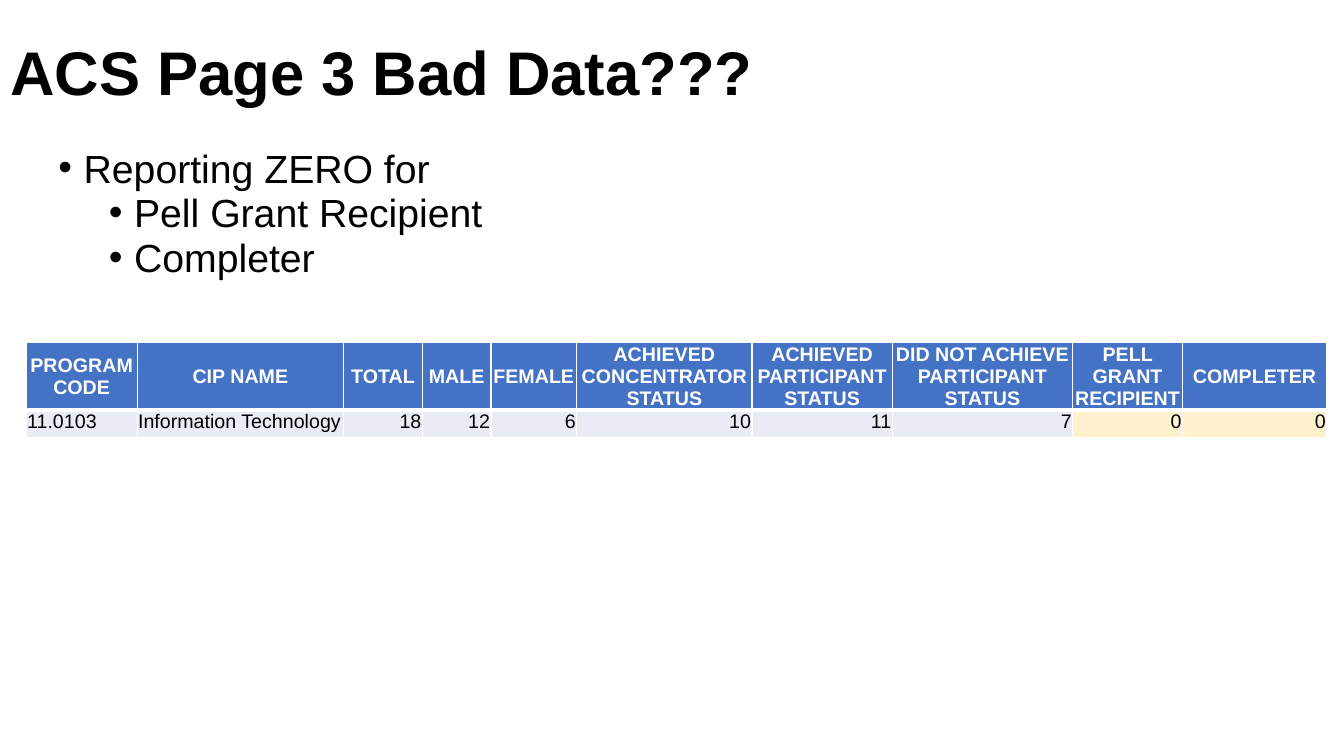
from lxml import etree
from pptx import Presentation
from pptx.dml.color import RGBColor
from pptx.enum.text import MSO_ANCHOR, MSO_AUTO_SIZE, PP_ALIGN
from pptx.oxml.ns import qn
from pptx.util import Inches, Pt

LEFT, MID, RIGHT = PP_ALIGN.LEFT, PP_ALIGN.CENTER, PP_ALIGN.RIGHT
TOP, CENTER = MSO_ANCHOR.TOP, MSO_ANCHOR.MIDDLE
FIXED = MSO_AUTO_SIZE.NONE

BLACK, WHITE = "000000", "FFFFFF"
BLUE, PALE, CREAM = "4472C4", "E9EBF5", "FFF2CC"

# Name, width and value of each table column
COLS = [
    ("PROGRAM CODE", 1.1, "11.0103"),
    ("CIP NAME", 2.05, "Information Technology"),
    ("TOTAL", 0.78, "18"),
    ("MALE", 0.68, "12"),
    ("FEMALE", 0.85, "6"),
    ("ACHIEVED CONCENTRATOR STATUS", 1.74, "10"),
    ("ACHIEVED PARTICIPANT STATUS", 1.39, "11"),
    ("DID NOT ACHIEVE PARTICIPANT STATUS", 1.79, "7"),
    ("PELL GRANT RECIPIENT", 1.09, "0"),
    ("COMPLETER", 1.43, "0"),
]
ROWS = [0.65, 0.28]
POINTS = [(0, "Reporting ZERO for"), (1, "Pell Grant Recipient"), (1, "Completer")]


def color(code):
    return RGBColor.from_string(code)


def apply(item, **values):
    for name, value in values.items():
        setattr(item, name, value)


def place(shape, box):
    sides = ("left", "top", "width", "height")
    apply(shape, **dict(zip(sides, map(Inches, box))))


def write(para, text, size, tone=BLACK, bold=False):
    run = para.add_run()
    run.text = text
    apply(run.font, name="Arial", size=Pt(size), bold=bold)
    run.font.color.rgb = color(tone)


def bullet(para, left):
    props = para._p.get_or_add_pPr()
    props.set("marL", str(Inches(left)))
    props.set("indent", str(Inches(-0.25)))
    etree.SubElement(props, qn("a:buFont"), typeface="Arial")
    etree.SubElement(props, qn("a:buChar"), char="•")


def border(cell, base):
    props = cell._tc.get_or_add_tcPr()
    for spot, side in enumerate("LRTB"):
        width = Pt(base if side == "B" else 1)
        line = etree.Element(qn(f"a:ln{side}"), w=str(width))
        fill = etree.SubElement(line, qn("a:solidFill"))
        etree.SubElement(fill, qn("a:srgbClr"), val=WHITE)
        props.insert(spot, line)


# Heading
def title(shape, box):
    place(shape, box)
    frame = shape.text_frame
    apply(frame, auto_size=FIXED, vertical_anchor=CENTER, word_wrap=True)
    para = frame.paragraphs[0]
    apply(para, alignment=LEFT, line_spacing=0.9)
    write(para, "ACS Page 3 Bad Data???", 44, bold=True)


# Bulleted list
def points(shape, box):
    place(shape, box)
    frame = shape.text_frame
    apply(frame, auto_size=FIXED, vertical_anchor=TOP, word_wrap=True)
    for spot, (level, text) in enumerate(POINTS):
        para = frame.add_paragraph() if spot else frame.paragraphs[0]
        bullet(para, 0.25 + 0.5 * level)
        apply(para, level=level, line_spacing=0.8, space_before=Pt(5 * level))
        write(para, text, 28)


# One table cell
def entry(cell, text, fill, align, head):
    gap = Inches(0.01)
    apply(cell, margin_left=gap, margin_right=gap, margin_top=gap,
          margin_bottom=0, vertical_anchor=CENTER if head else TOP)
    cell.fill.solid()
    cell.fill.fore_color.rgb = color(fill)
    border(cell, 3 if head else 1)
    para = cell.text_frame.paragraphs[0]
    para.alignment = align
    write(para, text, 14, WHITE if head else BLACK, head)


# Program table
def grid(slide, box):
    frame = slide.shapes.add_table(len(ROWS), len(COLS), *map(Inches, box))
    table = frame.table
    for row, high in zip(table.rows, ROWS):
        row.height = Inches(high)
    for spot, (name, wide, value) in enumerate(COLS):
        table.columns[spot].width = Inches(wide)
        entry(table.cell(0, spot), name, BLUE, MID, True)
        fill = CREAM if value == "0" else PALE
        align = LEFT if spot < 2 else RIGHT
        entry(table.cell(1, spot), value, fill, align, False)


def main():
    deck = Presentation()
    apply(deck, slide_width=Inches(13.33), slide_height=Inches(7.5))
    slide = deck.slides.add_slide(deck.slide_layouts[1])
    title(slide.shapes.title, (0, 0.02, 11.5, 1.45))
    points(slide.placeholders[1], (0.48, 1.47, 5.67, 1.45))
    grid(slide, (0.26, 3.4, sum(col[1] for col in COLS), sum(ROWS)))
    deck.save("out.pptx")


if __name__ == "__main__":
    main()
